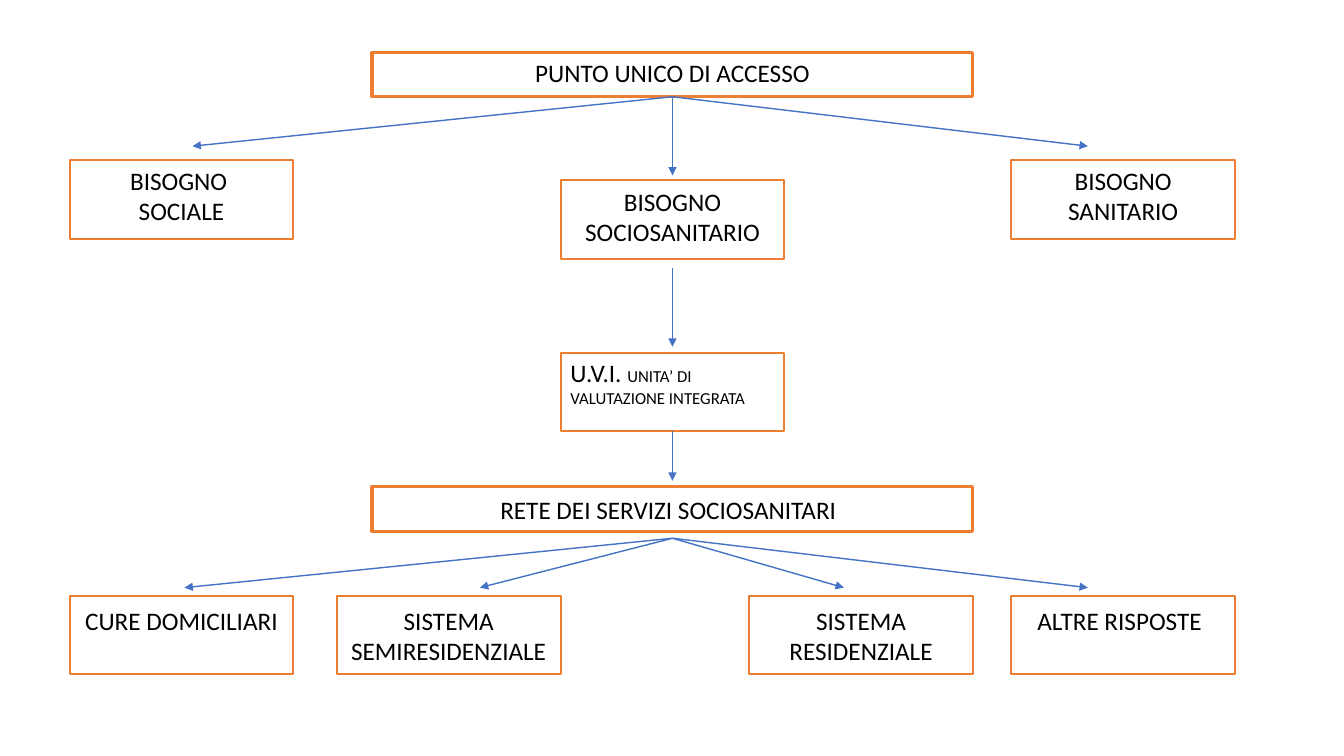
from lxml import etree
from pptx import Presentation
from pptx.dml.color import RGBColor
from pptx.enum.shapes import MSO_CONNECTOR as Connector, MSO_SHAPE as Shape
from pptx.enum.text import MSO_ANCHOR as Anchor, PP_ALIGN as Align
from pptx.oxml.ns import qn
from pptx.util import Pt

EMU_PER_PX = 9144  # 100 px to the inch


def px(length):
    return length * EMU_PER_PX


def colour(hex_string):
    return RGBColor.from_string(hex_string)


class FlowChart:
    font = "Calibri"
    ink = "000000"
    paper = "FFFFFF"
    border = "ED7D31"
    arrow_colour = "4472C4"

    def __init__(self, page):
        self.page = page

    def box(self, left, top, width, height, text, line=1.5, drop=0, trim=0,
            align=Align.CENTER, detail=""):
        """Draw a box; drop lowers its text, trim narrows it on the right."""
        box = self.page.shapes.add_shape(
            Shape.RECTANGLE, px(left), px(top), px(width), px(height))
        box.shadow.inherit = False
        box.fill.solid()
        box.fill.fore_color.rgb = colour(self.paper)
        box.line.color.rgb = colour(self.border)
        box.line.width = Pt(line)
        frame = box.text_frame
        frame.word_wrap = True
        frame.vertical_anchor = Anchor.TOP
        frame.margin_left = px(10)
        frame.margin_right = px(10 + trim)
        frame.margin_top = px(5 + drop)
        frame.margin_bottom = 0
        para = frame.paragraphs[0]
        para.text = text
        para.alignment = align
        for span in para.runs:
            self.style(span, 18)
        if detail:
            span = para.add_run()
            span.text = detail
            self.style(span, 12)

    def style(self, span, size):
        span.font.name = self.font
        span.font.size = Pt(size)
        span.font.color.rgb = colour(self.ink)

    def bar(self, top, text, drop=0, trim=0):
        self.box(369, top, 596, 44, text, line=2.25, drop=drop, trim=trim)

    def node(self, left, top, text, **options):
        self.box(left, top, 222, 78, text, **options)

    def arrow(self, start, end):
        arrow = self.page.shapes.add_connector(
            Connector.STRAIGHT, *map(px, start), *map(px, end))
        arrow.line.color.rgb = colour(self.arrow_colour)
        arrow.line.width = Pt(1)
        properties = arrow._element.spPr
        outline = properties.find(qn("a:ln"))
        etree.SubElement(outline, qn("a:tailEnd"), type="triangle")
        etree.SubElement(properties, qn("a:effectLst"))

    def fan(self, start, tips, bottom):
        """Draw arrows from one point to several tips on one level."""
        for tip in tips:
            self.arrow(start, (tip, bottom))


def main():
    deck = Presentation()
    deck.slide_width, deck.slide_height = px(1333), px(750)
    chart = FlowChart(deck.slides.add_slide(deck.slide_layouts[6]))
    first, centre, last = 69, 556, 1003  # left edges of the columns
    axis = 667

    chart.bar(52, "PUNTO UNICO DI ACCESSO")
    chart.fan((axis, 96), (191, 1079), 145)
    chart.arrow((axis, 96), (axis, 174))

    chart.node(first, 159, "BISOGNO \nSOCIALE")
    chart.node(centre, 179, "BISOGNO\nSOCIOSANITARIO", drop=1)
    chart.node(last, 159, "BISOGNO\nSANITARIO")
    chart.arrow((axis, 266), (axis, 344))

    chart.node(centre, 350, "U.V.I. ", align=Align.LEFT,
               detail="UNITA’ DI VALUTAZIONE INTEGRATA")
    chart.arrow((axis, 428), (axis, 477))

    chart.bar(483, "RETE DEI SERVIZI SOCIOSANITARI", drop=2, trim=8)
    chart.fan((axis, 534), (183, 476, 837, 1079), 583)

    services = [
        (first, "CURE DOMICILIARI", 0),
        (334, "SISTEMA\nSEMIRESIDENZIALE", 0),
        (743, "SISTEMA\nRESIDENZIALE", 0),
        (last, "ALTRE RISPOSTE", 7),
    ]
    for left, text, trim in services:
        chart.node(left, 591, text, drop=4, trim=trim)

    deck.save("out.pptx")


if __name__ == "__main__":
    main()
